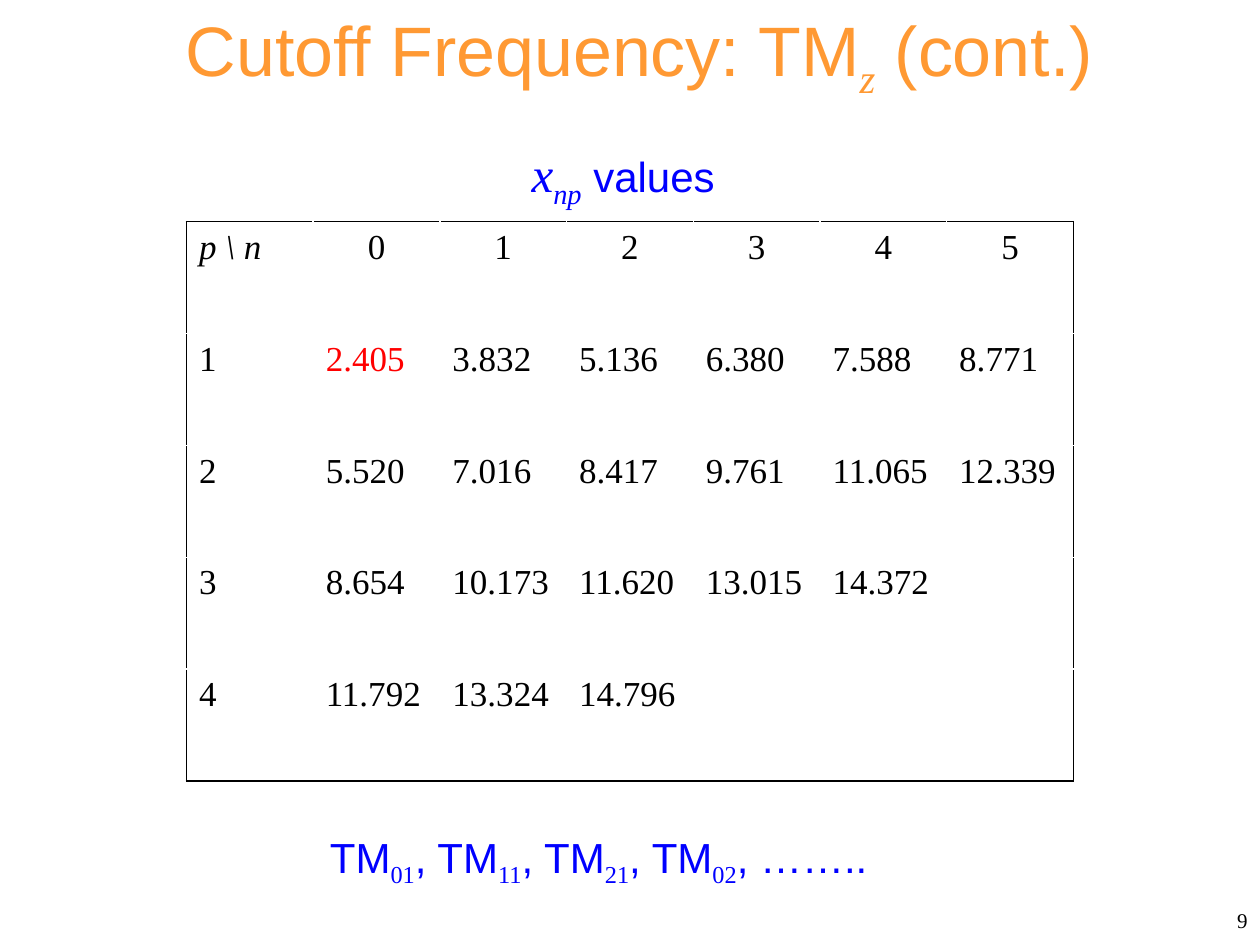
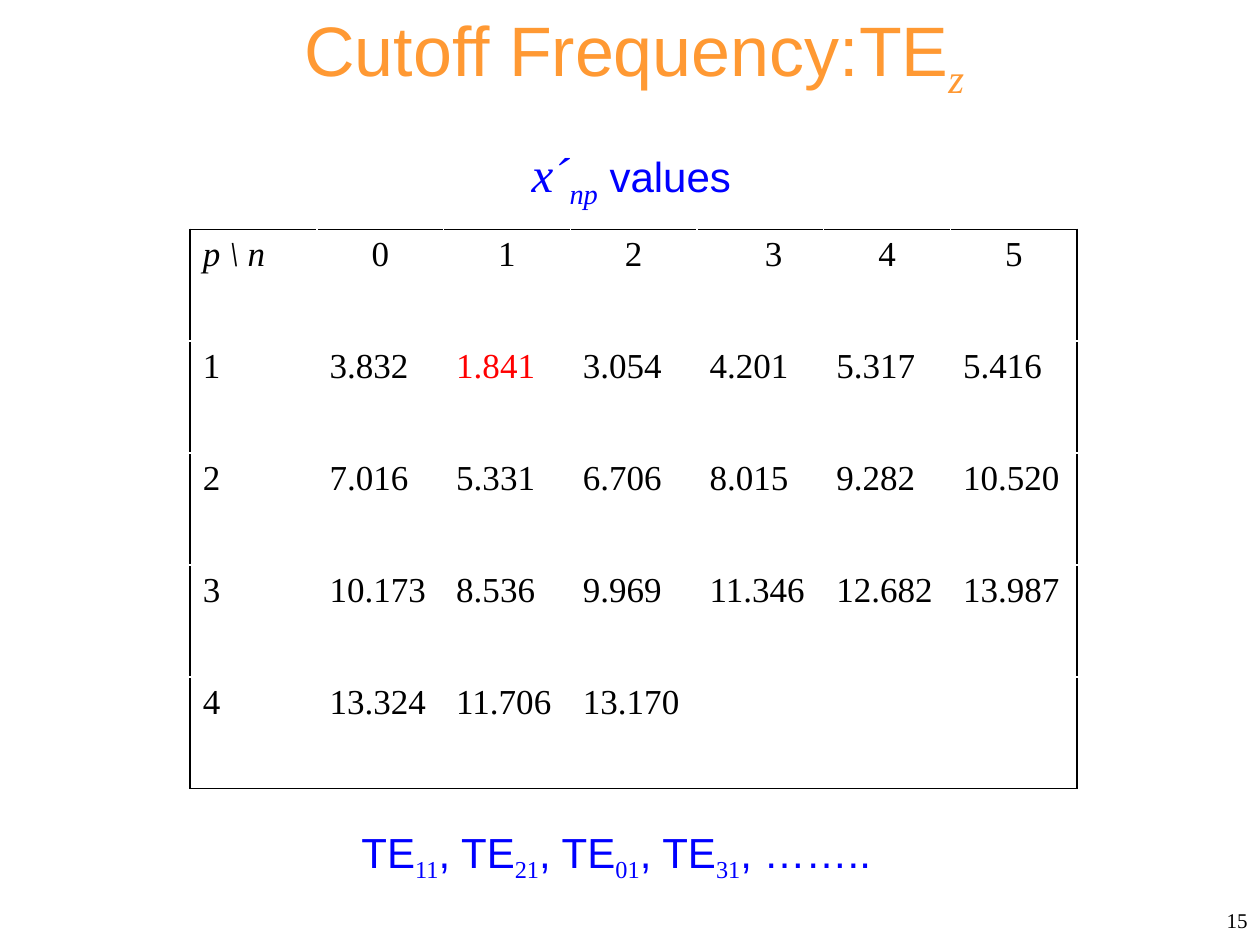
"""Builds two slides that tabulate waveguide cutoff values for TM and TE modes."""
from lxml.etree import SubElement
from pptx import Presentation
from pptx.dml.color import RGBColor
from pptx.enum.text import MSO_ANCHOR as Anchor, MSO_AUTO_SIZE as AutoSize, PP_ALIGN as Align
from pptx.oxml.ns import qn
from pptx.util import Inches, Pt

ORANGE, BLUE, RED, BLACK, WHITE = "FF9933", "0000FF", "FF0000", "000000", "FFFFFF"
SANS, SERIF = "Arial", "Times New Roman"
SUBSCRIPT = "-25000"
WIDTH, HEIGHT = 10, 7.5
COLUMN, ROW, CELL_MARGIN = 7.04 / 7, 4.44 / 5, 0.1
HEADER = ["p \\ n", "0", "1", "2", "3", "4", "5"]

SLIDES = [
    {
        "title": ["Cutoff Frequency: TM", "z", " (cont.)"],
        "title_left": 0.81,
        "symbol": "x",
        "symbol_width": 1.69,
        "table_at": (1.48, 1.76),
        "rows": [
            ["1", "2.405", "3.832", "5.136", "6.380", "7.588", "8.771"],
            ["2", "5.520", "7.016", "8.417", "9.761", "11.065", "12.339"],
            ["3", "8.654", "10.173", "11.620", "13.015", "14.372"],
            ["4", "11.792", "13.324", "14.796"],
        ],
        "lowest": "2.405",
        "header_shift": {},
        "mode": "TM",
        "mode_order": ["01", "11", "21", "02"],
        "modes_at": (2.52, 6.55, 4.61, 0.5),
        "number": "9",
    },
    {
        "title": ["Cutoff Frequency:TE", "z"],
        "title_left": 0.77,
        "symbol": "x´",
        "symbol_width": 1.88,
        "table_at": (1.51, 1.82),
        "rows": [
            ["1", "3.832", "1.841", "3.054", "4.201", "5.317", "5.416"],
            ["2", "7.016", "5.331", "6.706", "8.015", "9.282", "10.520"],
            ["3", "10.173", "8.536", "9.969", "11.346", "12.682", "13.987"],
            ["4", "13.324", "11.706", "13.170"],
        ],
        "lowest": "1.841",
        "header_shift": {"3": 0.21},
        "mode": "TE",
        "mode_order": ["11", "21", "01", "31"],
        "modes_at": (2.77, 6.51, 4.48, 0.5),
        "number": "15",
    },
]


def color(code):
    return RGBColor.from_string(code)


def add_span(para, text, size, name, code, italic=False, subscript=False):
    span = para.add_run()
    span.text = text
    font = span.font
    font.size, font.name, font.italic, font.bold = Pt(size), name, italic, False
    font.color.rgb = color(code)
    if subscript:
        span._r.get_or_add_rPr().set("baseline", SUBSCRIPT)


def add_box(page, left, top, width, height, anchor=Anchor.TOP):
    box = page.shapes.add_textbox(*map(Inches, (left, top, width, height)))
    box.text_frame.word_wrap = True
    box.text_frame.vertical_anchor = anchor
    return box.text_frame.paragraphs[0]


def add_title(page, parts, left):
    title = page.shapes.title
    title.left, title.top, title.width, title.height = map(Inches, (left, 0, 8.53, 0.77))
    frame = title.text_frame
    frame.auto_size, frame.vertical_anchor = AutoSize.NONE, Anchor.TOP
    para = frame.paragraphs[0]
    para.alignment = Align.CENTER
    for index, text in enumerate(parts):
        lowered = index % 2 == 1
        add_span(para, text, 40, SERIF if lowered else SANS, ORANGE, lowered, lowered)


def add_symbol(page, symbol, width):
    para = add_box(page, 4.12, 1.09, width, 0.57)
    add_span(para, symbol, 28, SERIF, BLUE, italic=True)
    add_span(para, "np", 28, SERIF, BLUE, italic=True, subscript=True)
    add_span(para, " values", 24, SANS, BLUE)


def set_borders(cell, edges):
    properties = cell._tc.get_or_add_tcPr()
    for position, (side, code) in enumerate(edges.items()):
        line = SubElement(properties, qn(f"a:ln{side}"), w=str(Pt(1)))
        fill = SubElement(line, qn("a:solidFill"))
        SubElement(fill, qn("a:srgbClr"), val=code)
        properties.insert(position, line)


def add_values(page, content):
    grid = [HEADER] + content["rows"]
    rows, columns = len(grid), len(HEADER)
    left, top = content["table_at"]
    table = page.shapes.add_table(
        rows, columns, *map(Inches, (left, top, columns * COLUMN, rows * ROW))
    ).table
    table.first_row = table.horz_banding = False
    for row in range(rows):
        for column in range(columns):
            cell = table.cell(row, column)
            cell.fill.background()
            edges = {
                "L": BLACK if column == 0 else WHITE,
                "R": BLACK if column == columns - 1 else WHITE,
            }
            if row == 0:
                edges["T"] = BLACK
            if row == rows - 1:
                edges["B"] = BLACK
            set_borders(cell, edges)
            if column >= len(grid[row]):
                continue
            text = grid[row][column]
            para = cell.text_frame.paragraphs[0]
            corner = row == column == 0
            if row == 0 and not corner:
                para.alignment = Align.CENTER
                cell.margin_left = Inches(CELL_MARGIN + content["header_shift"].get(text, 0))
            add_span(para, text, 20, SERIF, RED if text == content["lowest"] else BLACK, corner)


def add_modes(page, mode, order, place):
    para = add_box(page, *place)
    for index, digits in enumerate(order):
        add_span(para, f", {mode}" if index else mode, 24, SANS, BLUE)
        add_span(para, digits, 24, SERIF, BLUE, subscript=True)
    add_span(para, ", ……..", 24, SANS, BLUE)


def add_number(page, number):
    width, height = 2.33, 0.4
    para = add_box(page, WIDTH - width, HEIGHT - height, width, height, Anchor.MIDDLE)
    para.alignment = Align.RIGHT
    add_span(para, number, 12, SERIF, BLACK)


def main():
    deck = Presentation()
    deck.slide_width, deck.slide_height = Inches(WIDTH), Inches(HEIGHT)
    for content in SLIDES:
        page = deck.slides.add_slide(deck.slide_layouts.get_by_name("Title Only"))
        add_title(page, content["title"], content["title_left"])
        add_symbol(page, content["symbol"], content["symbol_width"])
        add_values(page, content)
        add_modes(page, content["mode"], content["mode_order"], content["modes_at"])
        add_number(page, content["number"])
    deck.save("out.pptx")


if __name__ == "__main__":
    main()
